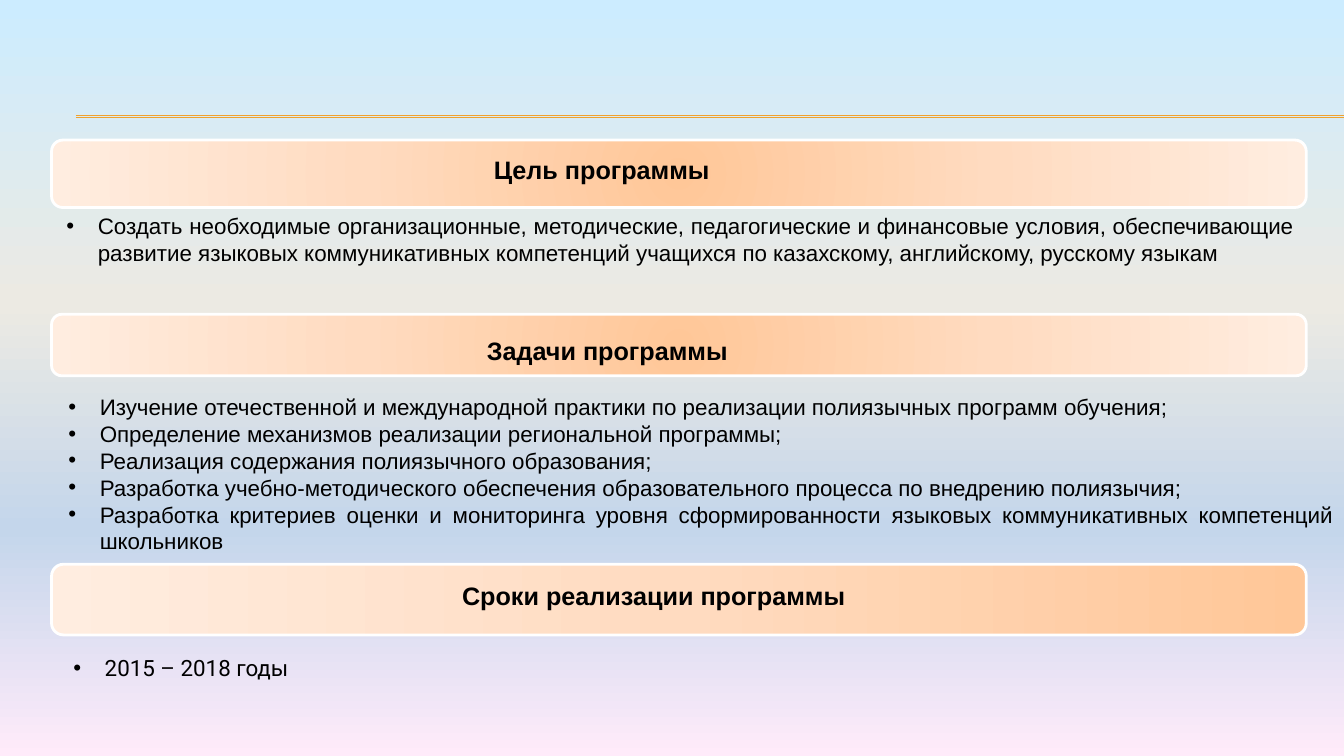
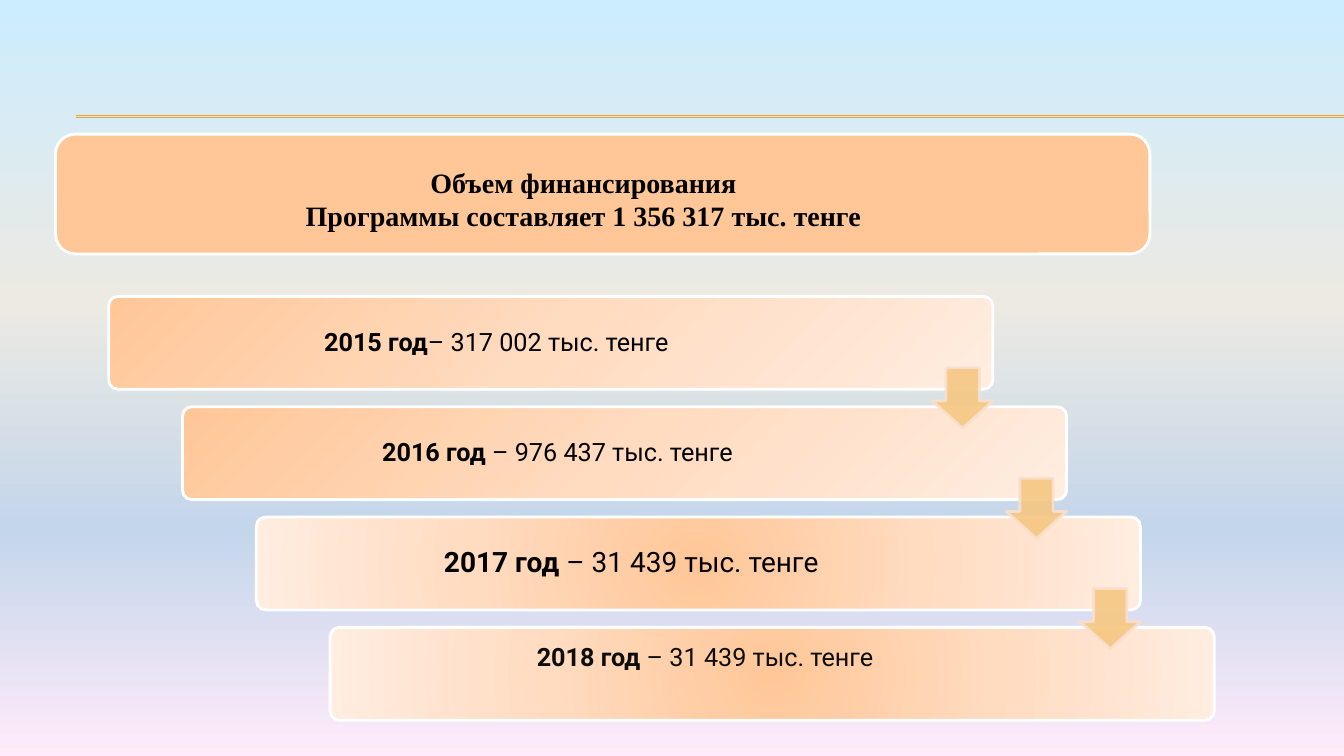
from lxml.etree import SubElement
from pptx import Presentation
from pptx.dml.color import RGBColor
from pptx.enum.shapes import MSO_CONNECTOR, MSO_SHAPE
from pptx.enum.text import MSO_ANCHOR, MSO_AUTO_SIZE, PP_ALIGN
from pptx.oxml import parse_xml
from pptx.oxml.ns import nsdecls, qn
from pptx.util import Cm, Pt

COLORS = {
    "text": "000000",
    "soft_text": "0D0D0D",
    "rule": "F0A22E",
    "outline": "FFFFFF",
    "peach": "FFC798",
    "arrow": "F6C782",
    "arrow_outline": "F9E0CD",
}
SKY = [(0, "CCECFF"), (40, "ECEAE3"), (70, "C4D6EB"), (100, "FFEBFA")]
PEACH = [(0, "FFC798"), (50, "FFDBC0"), (100, "FFEDE0")]
RADIAL = (
    '<a:path path="circle">'
    '<a:fillToRect l="50000" t="50000" r="50000" b="50000"/></a:path>'
)


def linear(angle):
    return f'<a:lin ang="{angle * 60000}" scaled="0"/>'


class Deck:
    def __init__(self):
        self.presentation = Presentation()
        self.presentation.slide_width = Cm(33.87)
        self.presentation.slide_height = Cm(19.05)
        self.master = self.presentation.slide_master
        self.gradient(self.master, self.master.background.fill, SKY, linear(90))
        self.slide = None

    def new_slide(self, layout):
        self.slide = self.presentation.slides.add_slide(
            self.presentation.slide_layouts[layout]
        )

    def gradient(self, owner, fill, stops, direction):
        fill.gradient()
        default = next(owner.element.iter(qn("a:gradFill")))
        marks = "".join(
            f'<a:gs pos="{position * 1000}"><a:srgbClr val="{color}"/></a:gs>'
            for position, color in stops
        )
        default.getparent().replace(default, parse_xml(
            f'<a:gradFill {nsdecls("a")} rotWithShape="1">'
            f"<a:gsLst>{marks}</a:gsLst>{direction}</a:gradFill>"
        ))

    def master_rules(self, *heights):
        rules = []
        for y in heights:
            rule = self.slide.shapes.add_connector(
                MSO_CONNECTOR.STRAIGHT, Cm(1.91), Cm(y), Cm(33.87), Cm(y)
            )
            rule.line.color.rgb = RGBColor.from_string(COLORS["rule"])
            rule.line.width = Pt(0.75)
            SubElement(rule.element.spPr, qn("a:effectLst"))
            rules.append(rule)
        for rule in rules:
            self.master.shapes.element.append(rule.element)

    def shape(self, kind, box, outline="outline"):
        shape = self.slide.shapes.add_shape(kind, *map(Cm, box))
        shape.shadow.inherit = False
        shape.line.color.rgb = RGBColor.from_string(COLORS[outline])
        shape.line.width = Pt(2)
        return shape

    def band(self, box, direction=None):
        band = self.shape(MSO_SHAPE.ROUNDED_RECTANGLE, box)
        if direction:
            self.gradient(band, band.fill, PEACH, direction)
        else:
            band.fill.solid()
            band.fill.fore_color.rgb = RGBColor.from_string(COLORS["peach"])
        return band

    def arrow(self, box):
        arrow = self.shape(MSO_SHAPE.DOWN_ARROW, box, "arrow_outline")
        arrow.adjustments[0] = 0.55
        arrow.adjustments[1] = 0.45
        arrow.fill.solid()
        arrow.fill.fore_color.rgb = RGBColor.from_string(COLORS["arrow"])
        for color in list(arrow.element.spPr.iter(qn("a:srgbClr"))):
            SubElement(color, qn("a:alpha"), val="90000")

    def placeholder(self, index, box):
        holder = self.slide.placeholders[index]
        holder.left, holder.top, holder.width, holder.height = map(Cm, box)
        self.slide.shapes.element.append(holder.element)
        return holder

    def text_box(self, box):
        return self.slide.shapes.add_textbox(*map(Cm, box))

    def put_text(self, holder, paragraphs, size, font="Arial", align=PP_ALIGN.CENTER,
                 anchor=MSO_ANCHOR.TOP, bullet=False, color="text", spacing=1.0):
        frame = holder.text_frame
        frame.word_wrap = True
        frame.auto_size = MSO_AUTO_SIZE.NONE
        frame.vertical_anchor = anchor
        for number, runs in enumerate(paragraphs):
            paragraph = frame.add_paragraph() if number else frame.paragraphs[0]
            paragraph.alignment = align
            paragraph.line_spacing = spacing
            paragraph.space_before = paragraph.space_after = Pt(0)
            properties = paragraph._p.get_or_add_pPr()
            indent = Cm(0.79) if bullet else 0
            properties.set("marL", str(indent))
            properties.set("indent", str(-indent))
            if bullet:
                SubElement(properties, qn("a:buFont"), typeface="Arial")
                SubElement(properties, qn("a:buChar"), char="•")
            else:
                SubElement(properties, qn("a:buNone"))
            for words, bold in runs:
                run = paragraph.add_run()
                run.text = words
                run.font.name = font
                run.font.size = Pt(size)
                run.font.bold = bold
                run.font.color.rgb = RGBColor.from_string(COLORS[color])

    def heading(self, holder, words, align=PP_ALIGN.CENTER):
        self.put_text(holder, [[(words, True)]], 18, align=align)

    def bullets(self, holder, items, align=PP_ALIGN.JUSTIFY, font="Arial"):
        self.put_text(holder, [[(item, False)] for item in items], 16, font, align,
                      bullet=True)

    def step(self, box, year, amount, direction, size, right_inset, color, top_inset):
        step = self.band(box, direction)
        step.adjustments[0] = 0.1
        frame = step.text_frame
        frame.margin_left = frame.margin_bottom = Cm(0.18)
        frame.margin_top = Cm(top_inset or 0.18)
        frame.margin_right = Cm(right_inset)
        anchor = MSO_ANCHOR.TOP if top_inset else MSO_ANCHOR.MIDDLE
        self.put_text(step, [[(year, True), (amount, False)]], size, "Roboto",
                      anchor=anchor, color=color, spacing=0.9)


def goals_slide(deck):
    deck.new_slide(4)
    deck.master_rules(2.92, 2.95)
    for y, height, direction in (
        (3.53, 1.7, RADIAL), (7.92, 1.55, RADIAL), (14.22, 1.78, linear(180))
    ):
        deck.band((1.3, y, 31.62, height), direction)

    deck.heading(deck.placeholder(0, (12.19, 3.76, 9.02, 1.2)),
                 "Цель программы", PP_ALIGN.LEFT)
    deck.bullets(deck.placeholder(2, (1.42, 5.23, 31.45, 2)), [
        "Создать необходимые организационные, методические, педагогические и "
        "финансовые условия, обеспечивающие развитие языковых коммуникативных "
        "компетенций учащихся по казахскому, английскому, русскому языкам",
    ])
    deck.heading(deck.placeholder(1, (9.83, 8.33, 10.95, 1.2)), "Задачи программы")
    deck.bullets(deck.placeholder(4, (1.47, 9.78, 32.4, 4.4)), [
        "Изучение отечественной и международной практики по реализации "
        "полиязычных программ обучения;",
        "Определение механизмов реализации региональной программы;",
        "Реализация содержания полиязычного образования;",
        "Разработка учебно-методического обеспечения образовательного процесса "
        "по внедрению полиязычия;",
        "Разработка критериев оценки и мониторинга уровня сформированности "
        "языковых коммуникативных компетенций школьников",
    ])
    deck.heading(deck.placeholder(3, (9.73, 14.5, 13.49, 1.2)),
                 "Сроки реализации программы")
    deck.bullets(deck.text_box((1.6, 16.36, 27.53, 0.94)), ["2015 – 2018 годы"],
                 PP_ALIGN.LEFT, "Roboto")


def funding_slide(deck):
    deck.new_slide(5)
    deck.band((1.4, 3.38, 27.58, 3.02))
    deck.put_text(deck.placeholder(0, (3.81, 4.04, 21.79, 2)), [
        [("Объем финансирования", True)],
        [("Программы составляет 1 356 317 тыс. тенге", True)],
    ], 20, "Times New Roman")

    left, top, width, height = 2.74, 7.47, 22.28, 2.34
    shift, pitch, arrow_side = 1.86, 2.78, 1.52
    years = [
        ("2015 год", "– 317 002 тыс. тенге", linear(45), 18, 2.92, "text", None),
        ("2016 год", " – 976 437 тыс. тенге", linear(45), 18, 3.56, "text", None),
        ("2017 год", " – 31 439 тыс. тенге", RADIAL, 20, 3.56, "text", None),
        ("2018 год", " – 31 439 тыс. тенге", RADIAL, 18, 3.56, "soft_text", 0.36),
    ]
    for number, year in enumerate(years):
        deck.step((left + number * shift, top + number * pitch, width, height), *year)
    for number in range(len(years) - 1):
        deck.arrow((left + number * shift + width - arrow_side,
                    top + number * pitch + 1.8, arrow_side, arrow_side))


def main():
    deck = Deck()
    goals_slide(deck)
    funding_slide(deck)
    deck.presentation.save("out.pptx")


if __name__ == "__main__":
    main()
